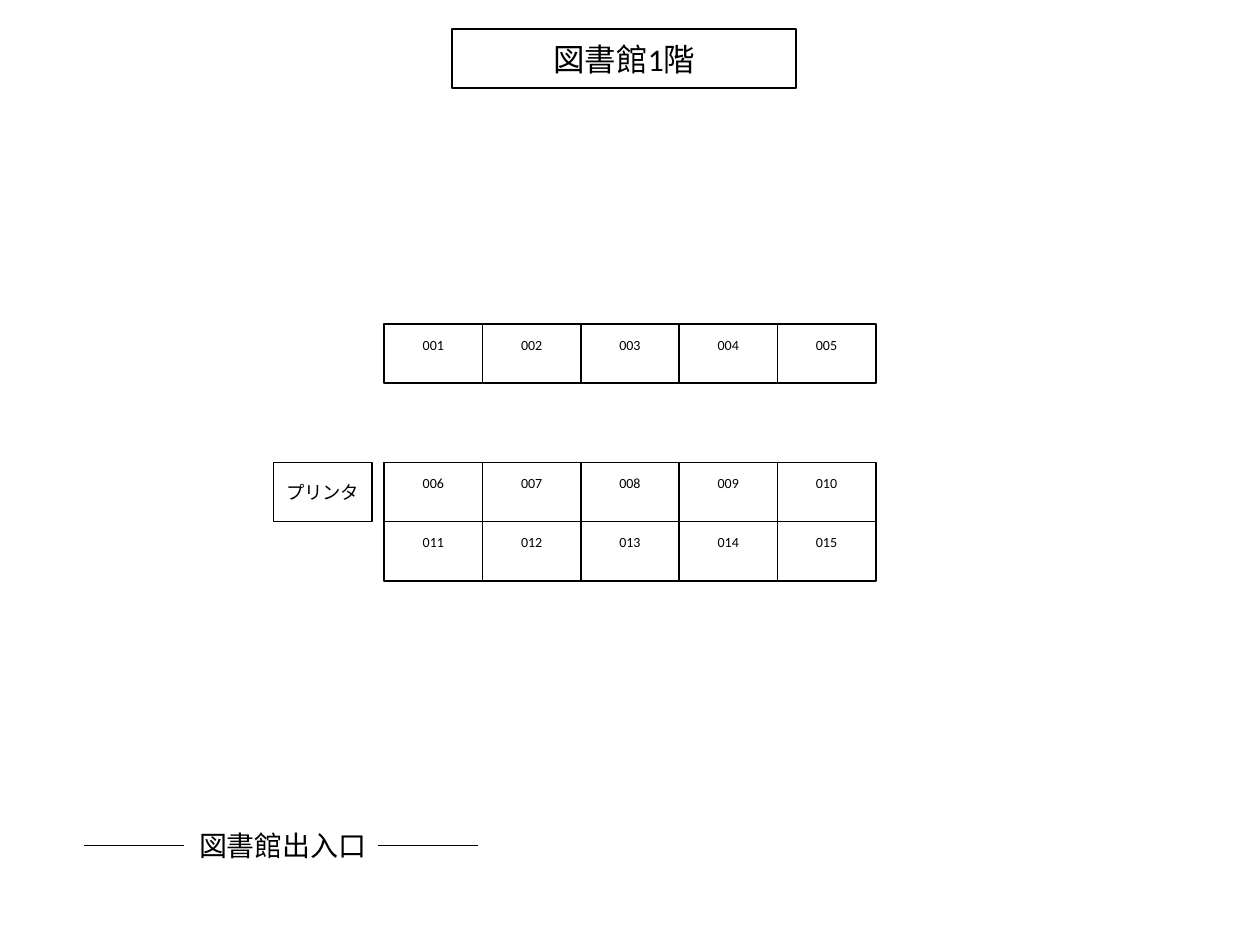
import pptx
import pptx.util
import pptx.dml.color
import pptx.enum.shapes
import pptx.enum.text
import pptx.oxml.ns
import lxml.etree

Inches = pptx.util.Inches
COLORS = {"ink": "000000", "paper": "FFFFFF"}


def rgb(name):
    return pptx.dml.color.RGBColor.from_string(COLORS[name])


def write(tf, text, size=8, font="Calibri", color="ink", anchor="MIDDLE", bottom=0.05):
    tf.word_wrap = True
    tf.vertical_anchor = pptx.enum.text.MSO_ANCHOR[anchor]
    tf.margin_bottom = Inches(bottom)
    p = tf.paragraphs[0]
    p.alignment = pptx.enum.text.PP_ALIGN.CENTER
    r = p.add_run()
    r.text = text
    r.font.size = pptx.util.Pt(size)
    r.font.name = font
    r.font.color.rgb = rgb(color)


class FloorPlan:
    box_line = 1
    door_line = 0.75

    def __init__(self, s):
        self.s = s

    def box(self, text, x, y, w, h, **style):
        sp = self.s.shapes.add_shape(
            pptx.enum.shapes.MSO_SHAPE.RECTANGLE,
            Inches(x), Inches(y), Inches(w), Inches(h))
        sp.shadow.inherit = False
        sp.fill.solid()
        sp.fill.fore_color.rgb = rgb("paper")
        sp.line.color.rgb = rgb("ink")
        sp.line.width = pptx.util.Pt(self.box_line)
        write(sp.text_frame, text, **style)

    def label(self, text, x, y, w, h, **style):
        sp = self.s.shapes.add_textbox(Inches(x), Inches(y), Inches(w), Inches(h))
        write(sp.text_frame, text, anchor="TOP", **style)
        sp.text_frame.auto_size = pptx.enum.text.MSO_AUTO_SIZE.SHAPE_TO_FIT_TEXT

    def line(self, x, y, length):
        sp = self.s.shapes.add_connector(
            pptx.enum.shapes.MSO_CONNECTOR.STRAIGHT,
            Inches(x), Inches(y), Inches(x + length), Inches(y))
        sp.line.color.rgb = rgb("ink")
        sp.line.width = pptx.util.Pt(self.door_line)
        lxml.etree.SubElement(
            sp._element.spPr, pptx.oxml.ns.qn("a:effectLst"))


def main():
    prs = pptx.Presentation()
    prs.slide_width, prs.slide_height = Inches(10), Inches(7.5)
    plan = FloorPlan(prs.slides.add_slide(prs.slide_layouts[6]))

    seat_w, seat_h, seats_per_row = 0.78, 0.47, 5
    seats_left, island_top = 3.05, 3.67
    row_tops = [2.57, island_top, island_top + seat_h]

    plan.box("図書館1階", 3.59, 0.23, 2.73, seat_h, size=18)
    for row, top in enumerate(row_tops):
        for col in range(seats_per_row):
            number = row * seats_per_row + col + 1
            plan.box(f"{number:03}", seats_left + col * seat_w, top,
                     seat_w, seat_h, bottom=0.19)
    plan.box("プリンタ", 2.17, island_top, seat_w, seat_h, size=10.5)

    plan.label("図書館出入口", 1.38, 6.53, 1.73, 0.37, size=16)
    for x in (0.67, 3):
        plan.line(x, 6.71, 0.79)

    prs.save("out.pptx")


if __name__ == "__main__":
    main()
